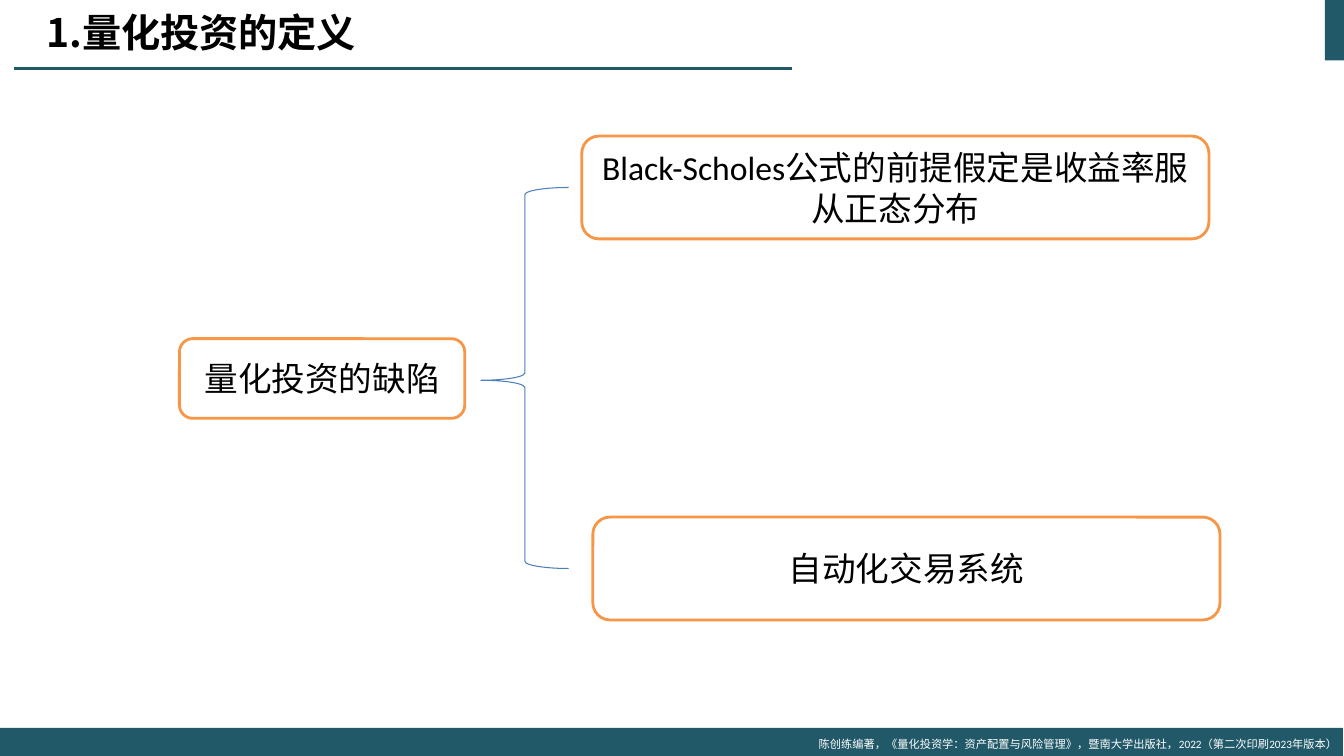
from dataclasses import dataclass

import pptx
import pptx.dml.color
import pptx.enum.shapes
import pptx.enum.text
import pptx.oxml.ns
import pptx.util
from lxml import etree

Inches = pptx.util.Inches
Shape = pptx.enum.shapes.MSO_SHAPE
Align = pptx.enum.text.PP_ALIGN


@dataclass(frozen=True)
class Theme:
    teal: str = "215968"
    orange: str = "F79646"
    blue: str = "4B7EBC"
    white: str = "FFFFFF"
    black: str = "000000"
    body_font: str = "Calibri"
    chinese_font: str = "Noto Sans CJK SC"
    title_size: int = 28
    topic_size: int = 24
    credit_size: int = 8


def rgb(value):
    return pptx.dml.color.RGBColor.from_string(value)


class SlideBuilder:
    def __init__(self, slide, theme):
        self.slide = slide
        self.theme = theme

    def add_wording(self, shape, text, size, color, align, font, bold=False):
        frame = shape.text_frame
        frame.word_wrap = True
        frame.vertical_anchor = pptx.enum.text.MSO_ANCHOR.MIDDLE
        paragraph = frame.paragraphs[0]
        paragraph.alignment = align
        run = paragraph.add_run()
        run.text = text
        run.font.size = pptx.util.Pt(size)
        run.font.bold = bold
        run.font.name = font
        run.font.color.rgb = rgb(color)
        east_asian = etree.Element(pptx.oxml.ns.qn("a:ea"), typeface=self.theme.chinese_font)
        run.font._element.find(pptx.oxml.ns.qn("a:latin")).addnext(east_asian)

    def shape(self, kind, box, fill=None, line=None, width=0.75):
        shape = self.slide.shapes.add_shape(kind, *map(Inches, box))
        shape.shadow.inherit = False
        if fill:
            shape.fill.solid()
            shape.fill.fore_color.rgb = rgb(fill)
        else:
            shape.fill.background()
        if line:
            shape.line.color.rgb = rgb(line)
            shape.line.width = pptx.util.Pt(width)
        else:
            shape.line.fill.background()
        return shape

    def band(self, box):
        return self.shape(Shape.RECTANGLE, box, fill=self.theme.teal)

    def rule(self, start, end):
        rule = self.slide.shapes.add_connector(
            pptx.enum.shapes.MSO_CONNECTOR.STRAIGHT, *map(Inches, start + end))
        rule.line.color.rgb = rgb(self.theme.teal)
        rule.line.width = pptx.util.Pt(1.5)
        etree.SubElement(rule._element.spPr, pptx.oxml.ns.qn("a:effectLst"))

    def label(self, box, text, size, color, align, font, bold=False):
        label = self.slide.shapes.add_textbox(*map(Inches, box))
        self.add_wording(label, text, size, color, align, font, bold)

    def topic(self, box, text):
        theme = self.theme
        topic = self.shape(Shape.ROUNDED_RECTANGLE, box, theme.white, theme.orange, 2)
        self.add_wording(topic, text, theme.topic_size, theme.black, Align.CENTER, theme.body_font)

    def brace(self, box, curl, tip):
        brace = self.shape(Shape.LEFT_BRACE, box, line=self.theme.blue)
        brace.adjustments[0] = curl
        brace.adjustments[1] = tip


def main():
    theme = Theme()
    deck = pptx.Presentation()
    deck.slide_width, deck.slide_height = Inches(13.33), Inches(7.5)
    builder = SlideBuilder(deck.slides.add_slide(deck.slide_layouts[6]), theme)

    builder.band((13.14, 0, 0.2, 0.6))
    builder.rule((7.86, 0.68), (0.14, 0.68))
    builder.band((0, 7.22, 13.32, 0.28))
    builder.label((7.97, 7.26, 5.39, 0.24),
                  "陈创练编著，《量化投资学：资产配置与风险管理》，暨南大学出版社，2022（第二次印刷2023年版本）",
                  theme.credit_size, theme.white, Align.RIGHT, theme.body_font)
    builder.label((0.36, 0.05, 5.05, 0.54), "1.量化投资的定义",
                  theme.title_size, theme.black, Align.LEFT, theme.chinese_font, bold=True)

    builder.topic((1.78, 3.36, 2.83, 0.79), "量化投资的缺陷")
    builder.brace((4.77, 1.86, 0.87, 3.78), curl=0.083, tip=0.506)
    defects = [
        (5.77, 1.35, "Black-Scholes公式的前提假定是收益率服从正态分布"),
        (5.88, 5.13, "自动化交易系统"),
    ]
    for left, top, defect in defects:
        builder.topic((left, top, 6.22, 1.02), defect)

    deck.save("out.pptx")


if __name__ == "__main__":
    main()
